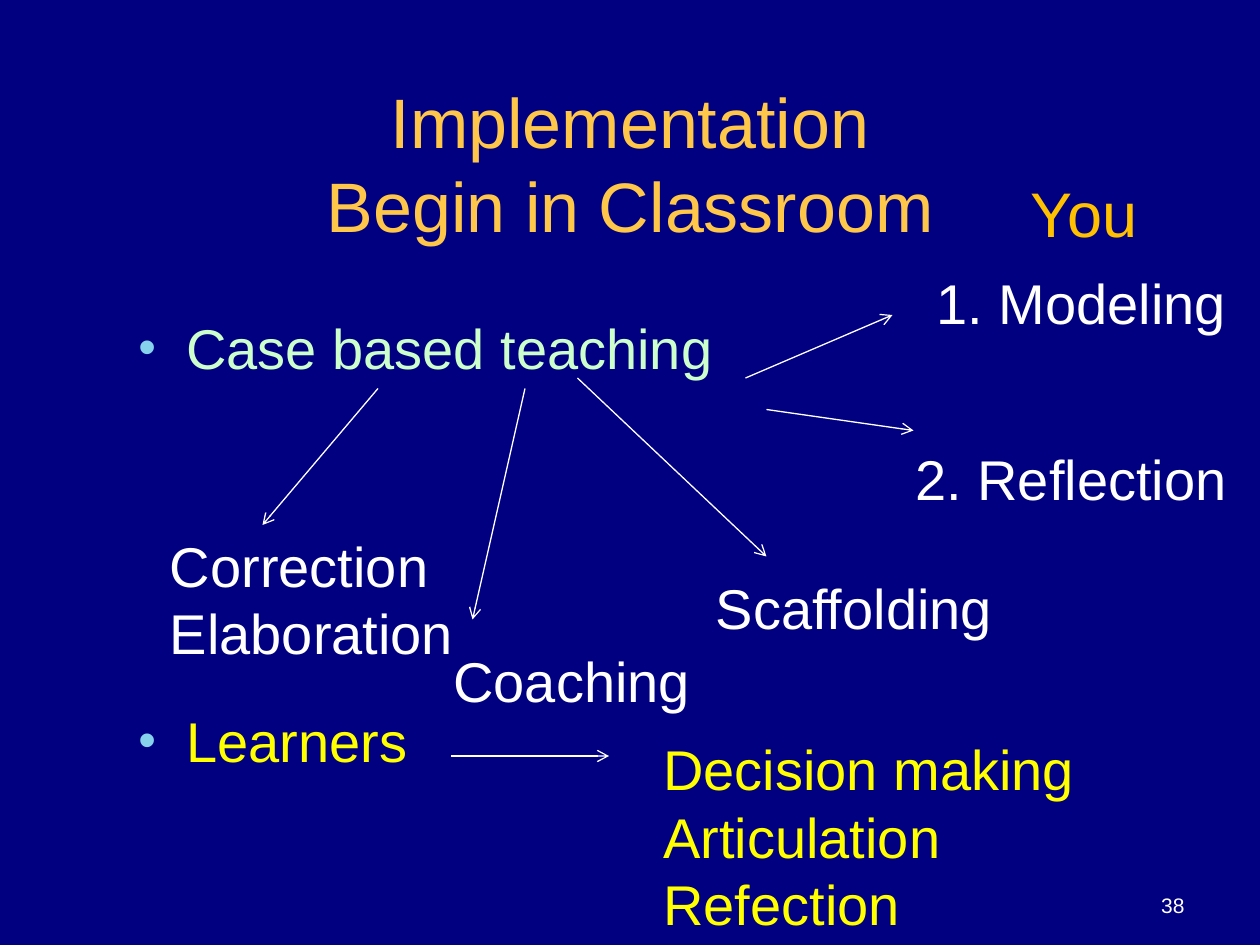
from lxml import etree
from pptx import Presentation
from pptx.dml.color import RGBColor
from pptx.enum.shapes import MSO_CONNECTOR
from pptx.enum.text import MSO_ANCHOR as Anchor, MSO_AUTO_SIZE as AutoSize, PP_ALIGN as Align
from pptx.oxml import parse_xml
from pptx.oxml.ns import nsdecls, qn
from pptx.util import Inches, Pt

WHITE, YELLOW = "FFFFFF", "FFFF00"

presentation = Presentation()
presentation.slide_width, presentation.slide_height = Inches(10), Inches(7.5)
slide = presentation.slides.add_slide(presentation.slide_layouts[6])
cell = presentation.slide_width // 120  # grid of 120 columns by 90 rows


def color(value):
    return RGBColor.from_string(value)


def add_text(text, column, row, columns, rows, size=32, fill=WHITE,
             align=Align.LEFT, anchor=Anchor.TOP, wrap=False, bullet=False):
    box = slide.shapes.add_textbox(*(round(n * cell) for n in (column, row, columns, rows)))
    frame = box.text_frame
    frame.word_wrap = wrap
    frame.auto_size = AutoSize.NONE if wrap else AutoSize.SHAPE_TO_FIT_TEXT
    frame.vertical_anchor = anchor
    frame.text = text
    for paragraph in frame.paragraphs:
        paragraph.alignment = align
        if bullet:
            properties = paragraph._p.get_or_add_pPr()
            properties.set("marL", str(Inches(0.38)))
            properties.set("indent", str(-Inches(0.38)))
            for xml in (f'<a:buClr {nsdecls("a")}><a:srgbClr val="86D1EC"/></a:buClr>',
                        f'<a:buSzPct {nsdecls("a")} val="90000"/>',
                        f'<a:buFont {nsdecls("a")} typeface="Arial"/>',
                        f'<a:buChar {nsdecls("a")} char="•"/>'):
                properties.append(parse_xml(xml))
        for run in paragraph.runs:
            run.font.name, run.font.size = "Arial", Pt(size)
            run.font.color.rgb = color(fill)


# Background
slide.background.fill.solid()
slide.background.fill.fore_color.rgb = color("000080")

# Title and slide number
add_text("Implementation\vBegin in Classroom", 6, 8, 108, 15, size=40, fill="FFC74A",
         align=Align.CENTER, anchor=Anchor.MIDDLE, wrap=True)
add_text("38", 97, 82, 17, 6, size=12, align=Align.RIGHT, anchor=Anchor.BOTTOM, wrap=True)

# Main points
for text, row, fill in (("Case based teaching", 29.3, "CCFFCC"), ("Learners", 66.7, YELLOW)):
    add_text(text, 12, row, 58, 7.7, fill=fill, wrap=True, bullet=True)

# Labels the arrows lead to
for text, column, row, columns in (
    ("1. Modeling", 88, 25, 30.2),
    ("2. Reflection", 86, 41.7, 32.3),
    ("Scaffolding", 67, 54, 28.9),
    ("Coaching", 42, 61, 25.2),
    ("Correction\nElaboration", 15, 50, 29.6),
):
    add_text(text, column, row, columns, 7.7 + 6.4 * text.count("\n"))
add_text("Decision making\nArticulation\nRefection", 62, 69.4, 41.9, 20.6, fill=YELLOW)
add_text("You", 97, 16, 12.6, 8.5, size=36, fill="FFC000")

# Arrows: start column and row, end column and row
for ends in (
    (71, 36, 85, 30),
    (73, 39, 85 + 2, 41),
    (55, 36, 73, 53),
    (50, 37, 45, 59),
    (36, 37, 25, 50),
    (43, 72, 58, 72),
):
    arrow = slide.shapes.add_connector(MSO_CONNECTOR.STRAIGHT, *(n * cell for n in ends))
    arrow.line.color.rgb = color(WHITE)
    arrow.line.width = Pt(0.75)
    etree.SubElement(arrow.line._get_or_add_ln(), qn("a:tailEnd"), type="arrow")
    etree.SubElement(arrow._element.spPr, qn("a:effectLst"))

presentation.save("out.pptx")
